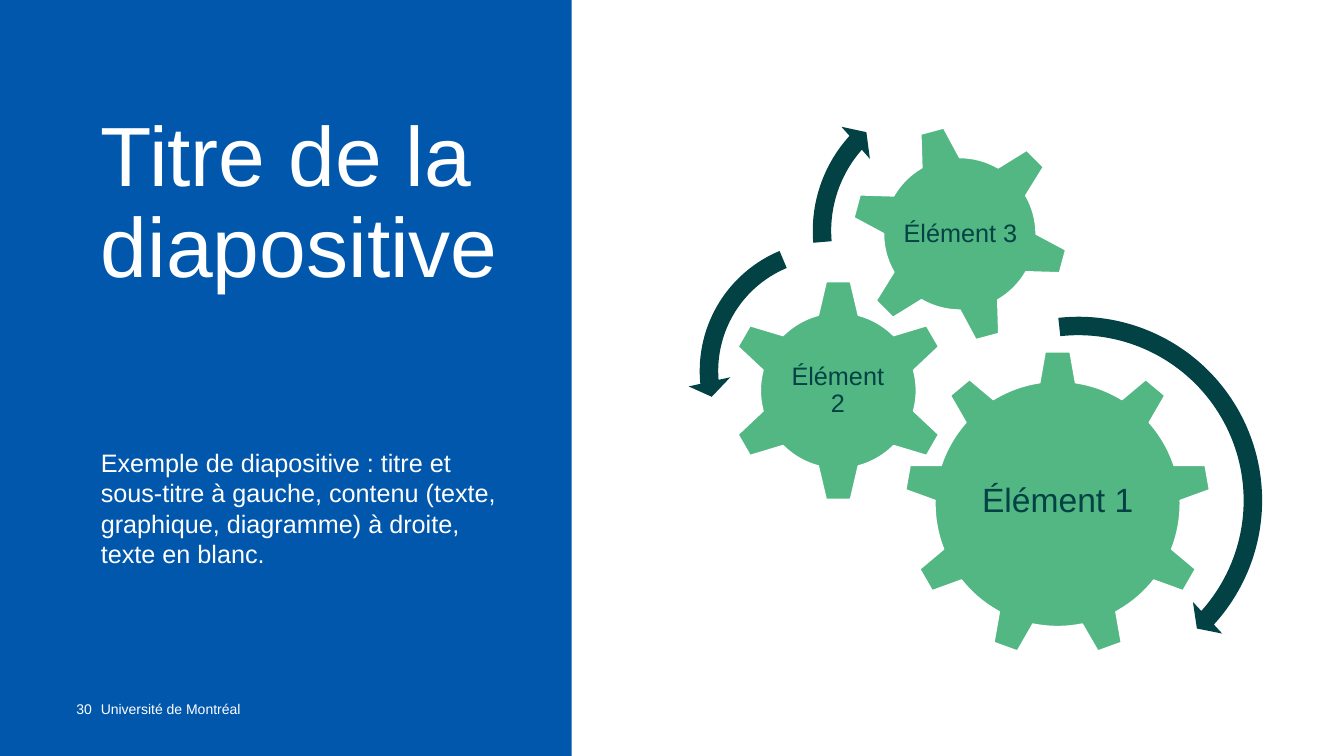
from dataclasses import dataclass

from pptx import Presentation
from pptx.dml.color import RGBColor
from pptx.enum.shapes import MSO_SHAPE as Preset
from pptx.enum.text import MSO_ANCHOR as Anchor, PP_ALIGN as Align
from pptx.util import Inches, Pt


@dataclass(frozen=True)
class Theme:
    font: str = "Arial"
    blue: RGBColor = RGBColor(0x00, 0x57, 0xAC)
    white: RGBColor = RGBColor(0xFF, 0xFF, 0xFF)
    green: RGBColor = RGBColor(0x52, 0xB7, 0x82)
    dark: RGBColor = RGBColor(0x02, 0x42, 0x44)
    title: int = 60
    body: int = 18
    large_label: int = 24
    footer: int = 10


THEME = Theme()

GEARS = [
    ("Élément 1", Preset.GEAR_9, (3.3, 3.48, 3.04), 0, (3.91, 4.2, 1.82, 1.56), THEME.large_label),
    ("Élément 2", Preset.GEAR_6, (1.54, 2.77, 2.21), 0, (2.09, 3.33, 1.1, 1.09), THEME.body),
    ("Élément 3", Preset.GEAR_6, (2.77, 1.24, 2.16), 345, (3.25, 1.72, 1.21, 1.21), THEME.body),
]
ARROWS = [
    (Preset.CIRCULAR_ARROW, (3.08, 3.02, 3.89), (0.047, 2.99, 25.334, 158.247, 0.055)),
    (Preset.LEFT_CIRCULAR_ARROW, (1.15, 2.27, 2.82), (0.065, 4.3, 104.891, 148.378, 0.075)),
    (Preset.CIRCULAR_ARROW, (2.27, 0.77, 3.04), (0.06, 3.941, 133.138, 105.082, 0.07)),
]


def add_text(slide, box, text, size, color=THEME.white, align=Align.LEFT,
             anchor=Anchor.TOP, margins=(0, 0, 0, 0), line_spacing=None):
    frame = slide.shapes.add_textbox(*map(Inches, box)).text_frame
    frame.word_wrap = True
    frame.vertical_anchor = anchor
    (frame.margin_left, frame.margin_top,
     frame.margin_right, frame.margin_bottom) = map(Inches, margins)
    frame.text = text
    paragraph = frame.paragraphs[0]
    paragraph.alignment = align
    paragraph.line_spacing = line_spacing
    font = paragraph.runs[0].font
    font.name, font.size = THEME.font, Pt(size)
    font.color.rgb = color


def add_preset(slide, preset, box, fill, outline=None):
    shape = slide.shapes.add_shape(preset, *map(Inches, box))
    shape.shadow.inherit = False
    shape.fill.solid()
    shape.fill.fore_color.rgb = fill
    if outline is None:
        shape.line.fill.background()
    else:
        shape.line.color.rgb = outline
        shape.line.width = Pt(1)
    return shape


def add_title_panel(slide, box):
    left, top, width, height = box
    text_left, text_width = left + 1, width - 1.53
    footer_top = top + height - 0.55
    add_text(slide, (text_left, top + 1.13, text_width, 3.1),
             "Titre de la diapositive", THEME.title, line_spacing=0.9)
    add_text(slide, (text_left, top + 4.31, text_width, 1.5),
             "Exemple de diapositive : titre et sous-titre à gauche, contenu "
             "(texte, graphique, diagramme) à droite, texte en blanc.",
             THEME.body, margins=(0, 0.13, 0, 0))
    add_text(slide, (left + 0.5, footer_top, 0.45, 0.4), "30", THEME.footer,
             align=Align.CENTER, margins=(0.22, 0, 0, 0))
    add_text(slide, (text_left, footer_top, text_width, 0.4),
             "Université de Montréal", THEME.footer)


def add_gear_diagram(slide, box):
    left, top = box[:2]
    add_preset(slide, Preset.RECTANGLE, box, THEME.white)
    for label, preset, (x, y, size), rotation, label_box, label_size in GEARS:
        gear = add_preset(slide, preset, (left + x, top + y, size, size),
                          THEME.green, THEME.white)
        gear.rotation = rotation
        label_x, label_y, label_width, label_height = label_box
        add_text(slide, (left + label_x, top + label_y, label_width, label_height),
                 label, label_size, THEME.dark, Align.CENTER, Anchor.MIDDLE,
                 (0.03, 0.03, 0.03, 0.03), 0.9)
    for preset, (x, y, size), adjustments in ARROWS:
        arrow = add_preset(slide, preset, (left + x, top + y, size, size), THEME.dark)
        for index, value in enumerate(adjustments):
            arrow.adjustments[index] = value


def main():
    presentation = Presentation()
    presentation.slide_width = Inches(13.33)
    presentation.slide_height = Inches(7.5)
    slide = presentation.slides.add_slide(presentation.slide_layouts[6])
    slide.background.fill.solid()
    slide.background.fill.fore_color.rgb = THEME.blue
    add_gear_diagram(slide, (5.67, 0, 7.66, 7.5))
    add_title_panel(slide, (0, 0, 5.67, 7.5))
    presentation.save("out.pptx")


if __name__ == "__main__":
    main()
